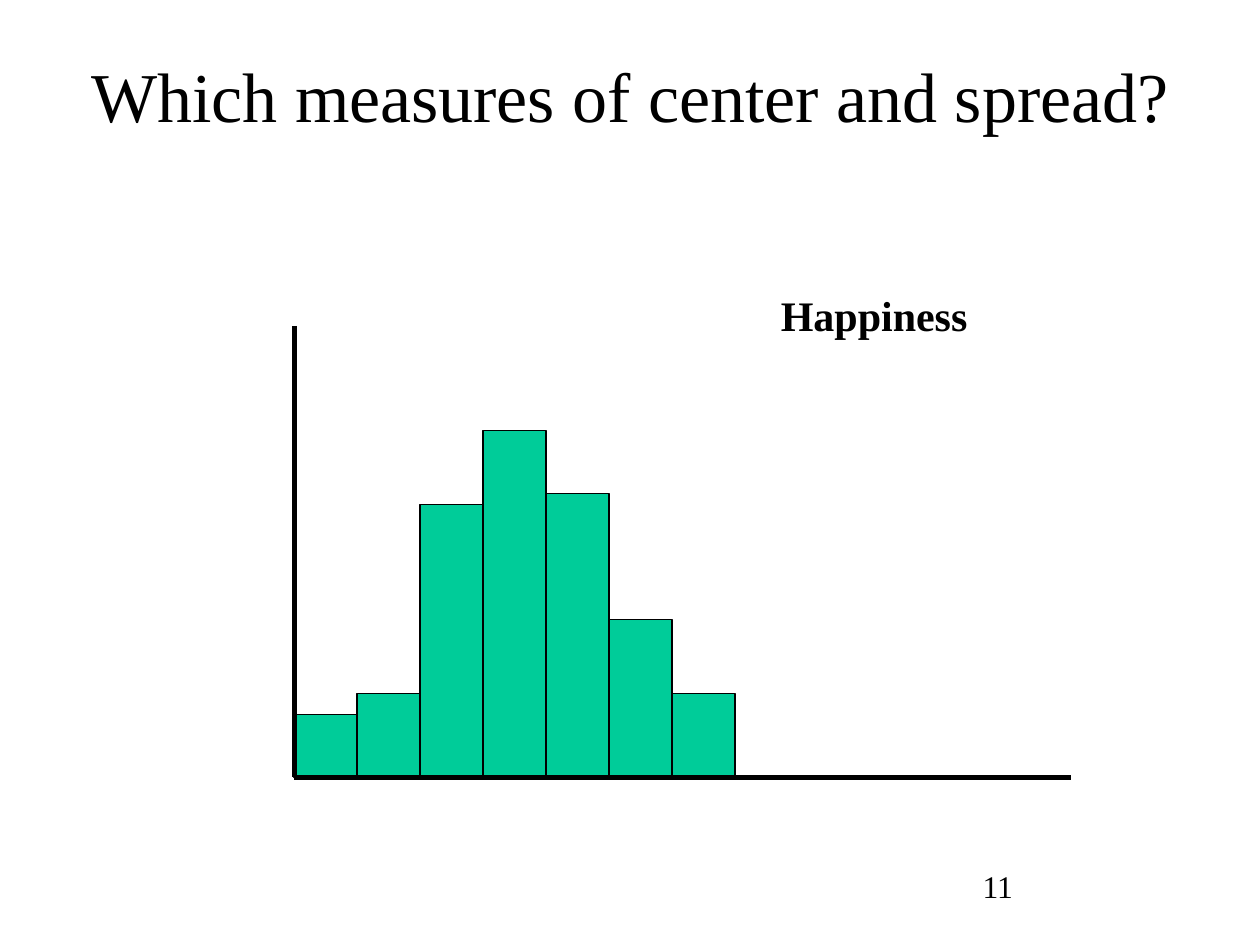
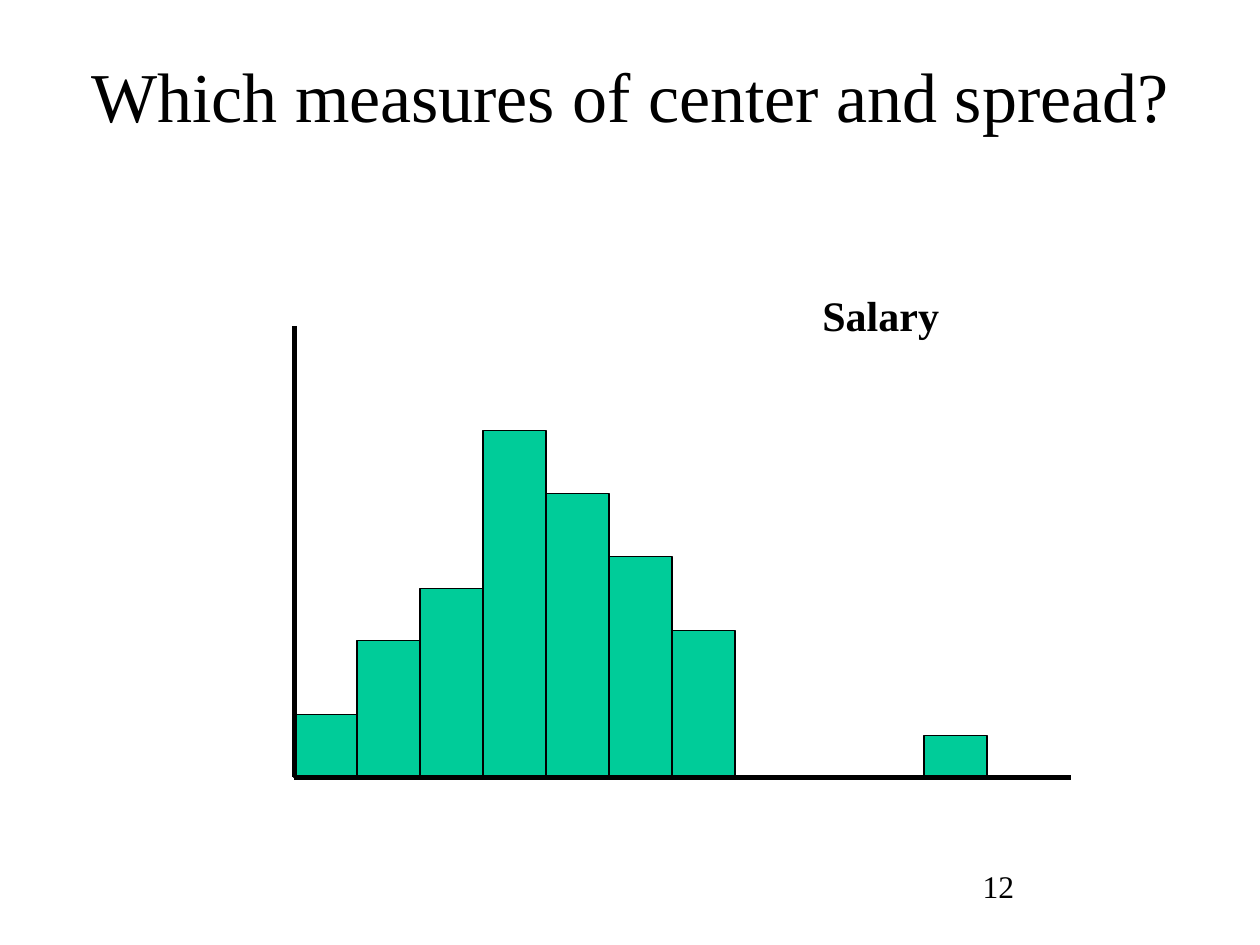
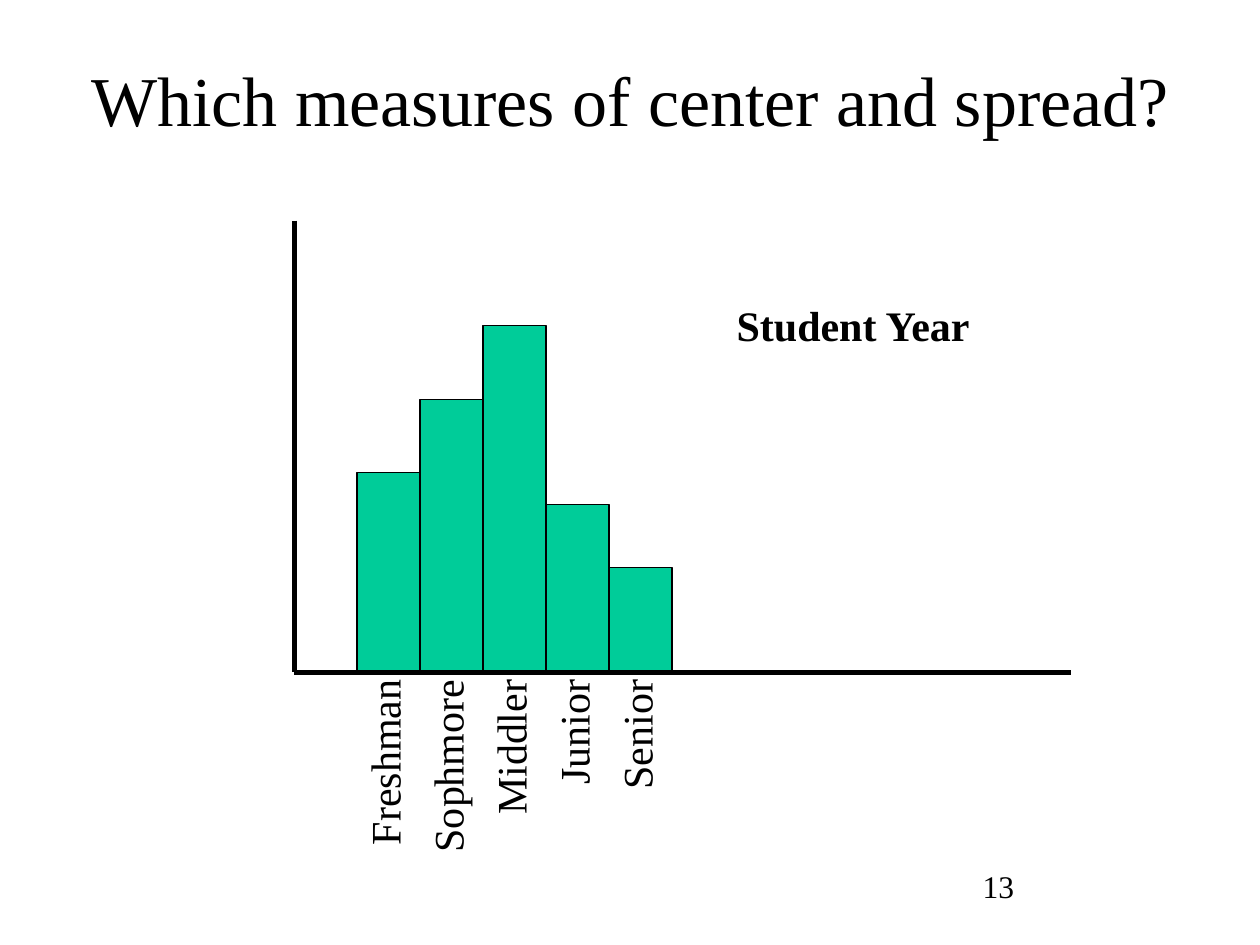
"""Build three slides that ask which measures suit each histogram."""
from pptx import Presentation
from pptx.dml.color import RGBColor
from pptx.enum.shapes import MSO_CONNECTOR, MSO_SHAPE
from pptx.enum.text import MSO_ANCHOR, MSO_AUTO_SIZE, PP_ALIGN
from pptx.oxml.xmlchemy import OxmlElement
from pptx.util import Cm, Pt

COLORS = {"ink": "000000", "bar": "00CC99", "page": "FFFFFF"}
FONT = "Times New Roman"
TITLE = "Which measures of center and spread?"
LEFT = 5.93
STEP = 1.27
UNIT = 2.54 / 12
RISE = 9.1
SPAN = 15.67
LINE = 1.3

SLIDES = [
    dict(page="11", top=0.76, base=15.67, bars=[6, 8, 26, 33, 27, 15, 8],
         name="Happiness", spot=(15.49, 5.72, 4.32)),
    dict(page="12", top=0.76, base=15.67,
         bars=[6, 13, 18, 33, 27, 21, 14, 0, 0, 0, 4],
         name="Salary", spot=(16.33, 5.72, 2.9)),
    dict(page="13", top=0.84, base=13.55, bars=[0, 19, 26, 33, 16, 10],
         name="Student Year", spot=(14.6, 5.92, 5.26)),
]
YEARS = [("Freshman", 3.89), ("Sophmore", 4.04), ("Middler", 3.28),
         ("Junior", 2.64), ("Senior", 2.74)]


def color(name):
    return RGBColor.from_string(COLORS[name])


def write(frame, text, size=24, bold=False, align=PP_ALIGN.LEFT, wrap=False):
    frame.word_wrap = wrap
    frame.auto_size = MSO_AUTO_SIZE.NONE
    frame.vertical_anchor = MSO_ANCHOR.TOP
    frame.text = text
    line = frame.paragraphs[0]
    line.alignment = align
    font = line.runs[0].font
    font.name, font.size, font.bold = FONT, Pt(size), bold
    font.color.rgb = color("ink")


def place(shape, left, top, width, height):
    shape.left, shape.top = Cm(left), Cm(top)
    shape.width, shape.height = Cm(width), Cm(height)


def add_text(slide, text, left, top, width, height=LINE, turn=0, **style):
    box = slide.shapes.add_textbox(Cm(left), Cm(top), Cm(width), Cm(height))
    box.rotation = turn
    write(box.text_frame, text, **style)


def add_title(slide, top):
    title = slide.shapes.title
    place(title, 1.27, top, 22.86, 3.18)
    write(title.text_frame, TITLE, size=40, align=PP_ALIGN.CENTER, wrap=True)
    title.text_frame.margin_top = Cm(0.3)


def add_bars(slide, base, bars):
    for slot, count in enumerate(bars):
        if not count:
            continue
        tall = count * UNIT
        bar = slide.shapes.add_shape(
            MSO_SHAPE.RECTANGLE, Cm(LEFT + slot * STEP), Cm(base - tall),
            Cm(STEP), Cm(tall))
        bar.shadow.inherit = False
        bar.fill.solid()
        bar.fill.fore_color.rgb = color("bar")
        bar.line.color.rgb = color("ink")
        bar.line.width = Pt(0.75)


def add_axis(slide, *ends):
    axis = slide.shapes.add_connector(MSO_CONNECTOR.STRAIGHT, *map(Cm, ends))
    axis.line.color.rgb = color("ink")
    axis.line.width = Pt(3)
    axis.element.spPr.append(OxmlElement("a:effectLst"))


def add_years(slide, base):
    for slot, (year, width) in enumerate(YEARS, start=1):
        mid = LEFT + (slot + 0.5) * STEP - 0.08
        left = mid - width / 2
        top = base - 0.1 + (width - LINE) / 2
        add_text(slide, year, left, top, width, turn=270,
                 align=PP_ALIGN.RIGHT)


def add_slide(deck, page, top, base, bars, name, spot):
    slide = deck.slides.add_slide(deck.slide_layouts[5])
    add_text(slide, page, 19.56, 17.35, 5.28, size=18, wrap=True)
    add_title(slide, top)
    add_bars(slide, base, bars)
    add_axis(slide, LEFT, base - RISE, LEFT, base)
    add_axis(slide, LEFT, base, LEFT + SPAN, base)
    add_text(slide, name, *spot, bold=True)
    return slide


def main():
    deck = Presentation()
    deck.slide_width, deck.slide_height = Cm(25.4), Cm(19.05)
    back = deck.slide_master.background.fill
    back.solid()
    back.fore_color.rgb = color("page")
    for facts in SLIDES:
        slide = add_slide(deck, **facts)
    add_years(slide, facts["base"])
    deck.save("out.pptx")


if __name__ == "__main__":
    main()
